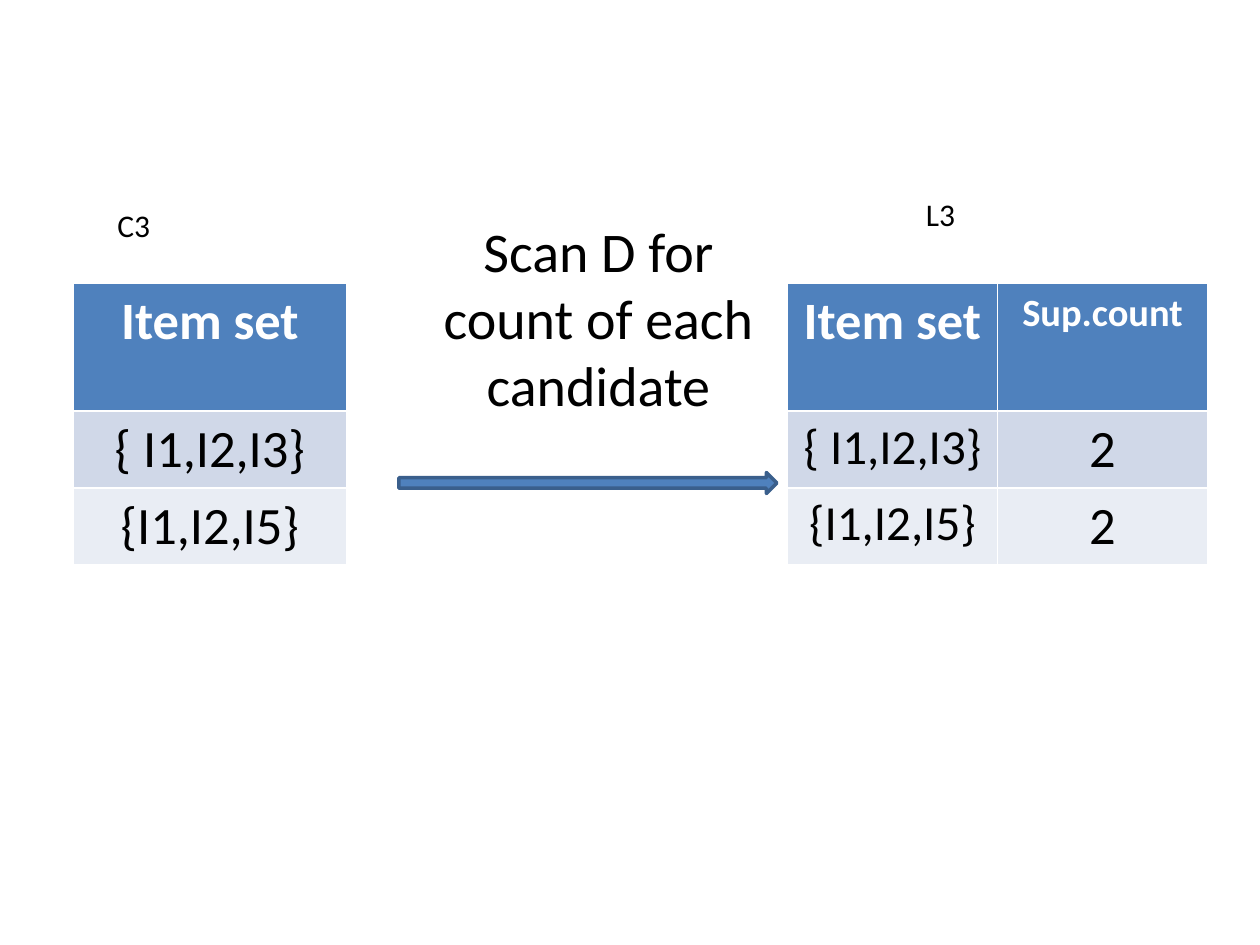
"""Build the slide that scans candidate item sets C3 into frequent item sets L3."""

from dataclasses import dataclass

from pptx import Presentation
from pptx.dml.color import RGBColor
from pptx.enum.shapes import MSO_SHAPE
from pptx.enum.text import PP_ALIGN
from pptx.slide import Slide
from pptx.text.text import TextFrame
from pptx.util import Pt

RIGHT_ARROW = MSO_SHAPE.RIGHT_ARROW
CENTER, LEFT = PP_ALIGN.CENTER, PP_ALIGN.LEFT
BLANK_LAYOUT = 6


@dataclass(frozen=True)
class Theme:
    font: str = "Calibri"
    ink: str = "000000"
    header_ink: str = "FFFFFF"
    accent: str = "4F81BD"
    accent_edge: str = "3A5F8C"
    bands: tuple[str, str] = ("D0D8E8", "E9EDF4")
    label: float = 18
    small_header: float = 22
    small_body: float = 28
    body: float = 30
    caption: float = 32


@dataclass(frozen=True)
class Box:
    left: float
    top: float
    width: float
    height: float

    def lengths(self) -> tuple[Pt, Pt, Pt, Pt]:
        return Pt(self.left), Pt(self.top), Pt(self.width), Pt(self.height)


@dataclass(frozen=True)
class Caption:
    text: str
    box: Box
    size: float
    align: PP_ALIGN


@dataclass(frozen=True)
class Column:
    header: str
    values: tuple[str, ...]
    header_size: float
    value_size: float


@dataclass(frozen=True)
class ItemTable:
    left: float
    column_width: float
    columns: tuple[Column, ...]


THEME = Theme()
TABLE_TOP = 162
ROW_HEIGHTS = (73, 43.5, 43.5)
ITEM_SETS = ("{ I1,I2,I3}", "{I1,I2,I5}")

SCAN_ARROW = Box(228, 270, 216, 12)
CAPTIONS = (
    Caption("Scan D for count of each candidate", Box(246, 120, 192, 124), THEME.caption, CENTER),
    Caption("C3", Box(60, 114, 66, 29), THEME.label, LEFT),
    Caption("L3", Box(522, 108, 66, 29), THEME.label, LEFT),
)
TABLES = (
    ItemTable(42, 156, (Column("Item set", ITEM_SETS, THEME.body, THEME.body),)),
    ItemTable(450, 120, (
        Column("Item set", ITEM_SETS, THEME.body, THEME.small_body),
        Column("Sup.count", ("2", "2"), THEME.small_header, THEME.body),
    )),
)


def write(frame: TextFrame, text: str, size: float, color: str, align: PP_ALIGN, bold: bool = False) -> None:
    """Put one formatted run into a text frame."""
    paragraph = frame.paragraphs[0]
    paragraph.alignment = align
    run = paragraph.add_run()
    run.text = text
    run.font.name = THEME.font
    run.font.size = Pt(size)
    run.font.bold = bold
    run.font.color.rgb = RGBColor.from_string(color)


def draw_arrow(slide: Slide, box: Box) -> None:
    """Draw the block arrow from the candidates to the result."""
    arrow = slide.shapes.add_shape(RIGHT_ARROW, *box.lengths())
    arrow.shadow.inherit = False
    arrow.fill.solid()
    arrow.fill.fore_color.rgb = RGBColor.from_string(THEME.accent)
    arrow.line.color.rgb = RGBColor.from_string(THEME.accent_edge)
    arrow.line.width = Pt(2)


def draw_caption(slide: Slide, caption: Caption) -> None:
    """Draw one wrapped text box."""
    frame = slide.shapes.add_textbox(*caption.box.lengths()).text_frame
    frame.word_wrap = True
    write(frame, caption.text, caption.size, THEME.ink, caption.align)


def draw_table(slide: Slide, spec_table: ItemTable) -> None:
    """Draw one item set table with a header and banded rows."""
    width = spec_table.column_width * len(spec_table.columns)
    box = Box(spec_table.left, TABLE_TOP, width, sum(ROW_HEIGHTS))
    table = slide.shapes.add_table(len(ROW_HEIGHTS), len(spec_table.columns), *box.lengths()).table
    for row, height in zip(table.rows, ROW_HEIGHTS):
        row.height = Pt(height)
    for column_index, column in enumerate(spec_table.columns):
        table.columns[column_index].width = Pt(spec_table.column_width)
        for row_index, text in enumerate((column.header, *column.values)):
            is_header = row_index == 0
            cell = table.cell(row_index, column_index)
            cell.fill.solid()
            fill = THEME.accent if is_header else THEME.bands[(row_index - 1) % 2]
            cell.fill.fore_color.rgb = RGBColor.from_string(fill)
            size = column.header_size if is_header else column.value_size
            ink = THEME.header_ink if is_header else THEME.ink
            write(cell.text_frame, text, size, ink, CENTER, is_header)


def main() -> None:
    """Assemble and save the slide."""
    presentation = Presentation()
    presentation.slide_width, presentation.slide_height = Pt(720), Pt(540)
    slide = presentation.slides.add_slide(presentation.slide_layouts[BLANK_LAYOUT])
    draw_arrow(slide, SCAN_ARROW)
    for item_table in TABLES:
        draw_table(slide, item_table)
    for caption in CAPTIONS:
        draw_caption(slide, caption)
    presentation.save("out.pptx")


if __name__ == "__main__":
    main()
